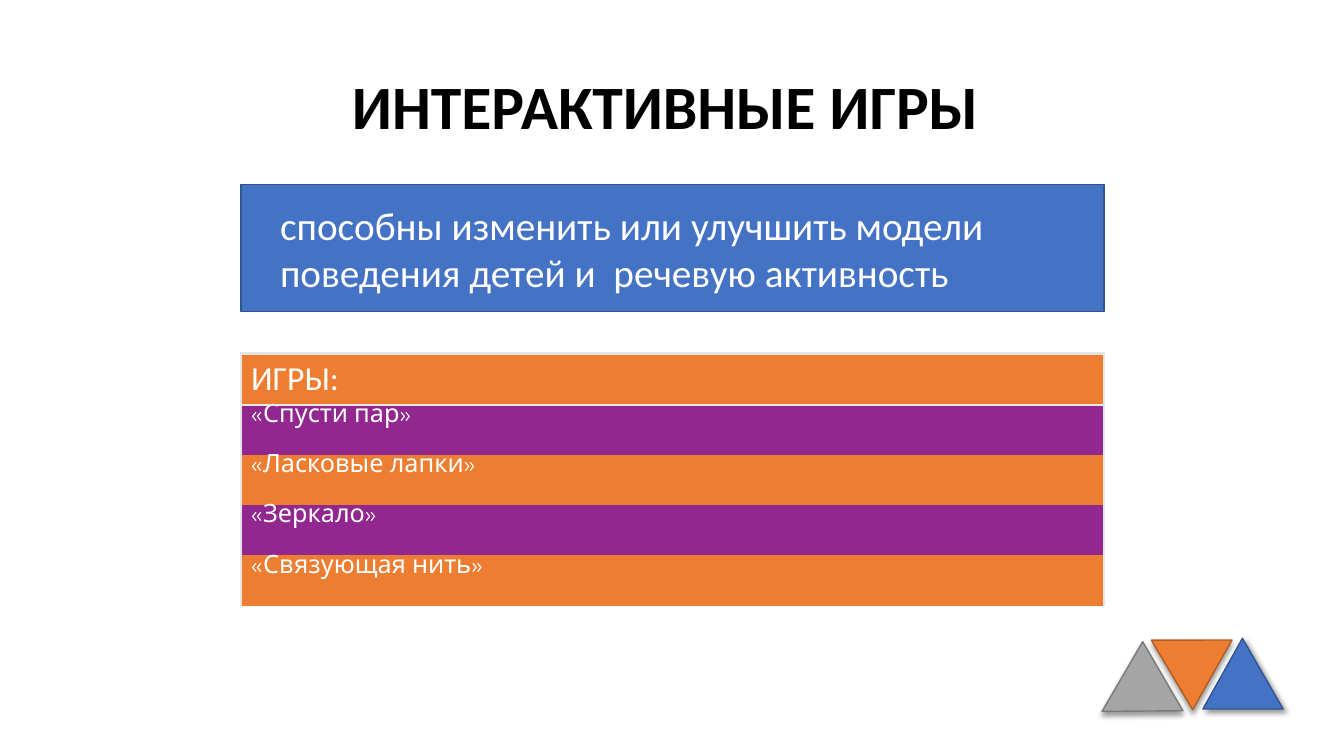
from lxml import etree
from pptx import Presentation
from pptx.dml.color import RGBColor
from pptx.enum.shapes import MSO_SHAPE
from pptx.enum.text import MSO_ANCHOR, PP_ALIGN
from pptx.oxml.ns import qn
from pptx.util import Pt

PX = 9144  # 100 px to the inch
RECTANGLE, TRIANGLE = MSO_SHAPE.RECTANGLE, MSO_SHAPE.ISOSCELES_TRIANGLE
MIDDLE = MSO_ANCHOR.MIDDLE
LEFT, CENTER = PP_ALIGN.LEFT, PP_ALIGN.CENTER
BLUE, DARK_BLUE = "4472C4", "325491"
ORANGE, PURPLE = "ED7D31", "92278F"
WHITE, BLACK, PALE = "FFFFFF", "000000", "E7E6E6"


def rgb(color):
    return RGBColor.from_string(color)


def style_text(paragraph, text, size, font="Calibri", color=WHITE, align=LEFT):
    paragraph.text = text
    paragraph.alignment = align
    paragraph.font.size = Pt(size)
    paragraph.font.name = font
    paragraph.font.color.rgb = rgb(color)


presentation = Presentation()
presentation.slide_width = 1333 * PX
presentation.slide_height = 750 * PX
slide = presentation.slides.add_slide(presentation.slide_layouts[5])

# Title
title = slide.shapes.title
title.left, title.top, title.width, title.height = [n * PX for n in (127, 35, 1080, 148)]
title.text_frame.vertical_anchor = MIDDLE
paragraph = title.text_frame.paragraphs[0]
style_text(paragraph, "ИНТЕРАКТИВНЫЕ ИГРЫ ", 44, color=BLACK, align=CENTER)
paragraph.font.bold = True
paragraph.line_spacing = 0.9

# Statement
statement = slide.shapes.add_shape(RECTANGLE, 239 * PX, 183 * PX, 856 * PX, 126 * PX)
statement.shadow.inherit = False
statement.fill.solid()
statement.fill.fore_color.rgb = rgb(BLUE)
statement.line.color.rgb = rgb(DARK_BLUE)
statement.line.width = Pt(1)
statement.text_frame.word_wrap = True
statement.text_frame.vertical_anchor = MIDDLE
paragraph = statement.text_frame.paragraphs[0]
style_text(paragraph, "способны изменить или улучшить модели поведения детей и  речевую активность", 28)
paragraph._p.get_or_add_pPr().set("marL", str(29 * PX))

# Games table
games = ["ИГРЫ:", "«Спусти пар»", "«Ласковые лапки»", "«Зеркало»", "«Связующая нить»"]
table = slide.shapes.add_table(len(games), 1, 239 * PX, 351 * PX, 856 * PX, 249 * PX).table
for index, game in enumerate(games):
    cell = table.cell(index, 0)
    paragraph = cell.text_frame.paragraphs[0]
    if index == 0:
        style_text(paragraph, game, 24)
        bordered = ("lnL", "lnR", "lnT", "lnB")
    else:
        style_text(paragraph, game, 18, "League Spartan")
        cell.margin_top = cell.margin_bottom = 0
        bordered = ("lnL", "lnR", "lnT") if index == 1 else ("lnL", "lnR")
    paragraph.font.bold = False
    properties = cell._tc.get_or_add_tcPr()
    for side in ("lnL", "lnR", "lnT", "lnB"):
        border = etree.SubElement(properties, qn(f"a:{side}"), w=str(Pt(2.25)))
        if side in bordered:
            border_fill = etree.SubElement(border, qn("a:solidFill"))
            etree.SubElement(border_fill, qn("a:srgbClr"), val=PALE)
        else:
            etree.SubElement(border, qn("a:noFill"))
    cell.fill.solid()
    cell.fill.fore_color.rgb = rgb(PURPLE if index % 2 else ORANGE)

# Corner triangles: left, top, width, rotation, fill, line, shadow direction
triangles = [
    (1182, 651, 81, 240.1, BLUE, DARK_BLUE, 45),
    (1142, 635, 80, 179.9, ORANGE, "AF5C24", 90),
    (1103, 654, 80, 120.2, "A5A5A5", "7A7A7A", 90),
]
group = slide.shapes.add_group_shape()
for left, top, width, rotation, fill, line, direction in triangles:
    triangle = group.shapes.add_shape(TRIANGLE, left * PX, top * PX, width * PX, 69 * PX)
    triangle.adjustments[0] = 0.49
    triangle.rotation = rotation
    triangle.fill.solid()
    triangle.fill.fore_color.rgb = rgb(fill)
    triangle.line.color.rgb = rgb(line)
    triangle.line.width = Pt(1)
    triangle.shadow.inherit = False
    effects = triangle._element.spPr.find(qn("a:effectLst"))
    shadow = etree.SubElement(effects, qn("a:outerShdw"), blurRad=str(Pt(4)), dist=str(Pt(3)),
                              dir=str(direction * 60000), rotWithShape="0")
    shadow_color = etree.SubElement(shadow, qn("a:srgbClr"), val=BLACK)
    etree.SubElement(shadow_color, qn("a:alpha"), val="40000")

presentation.save("out.pptx")
